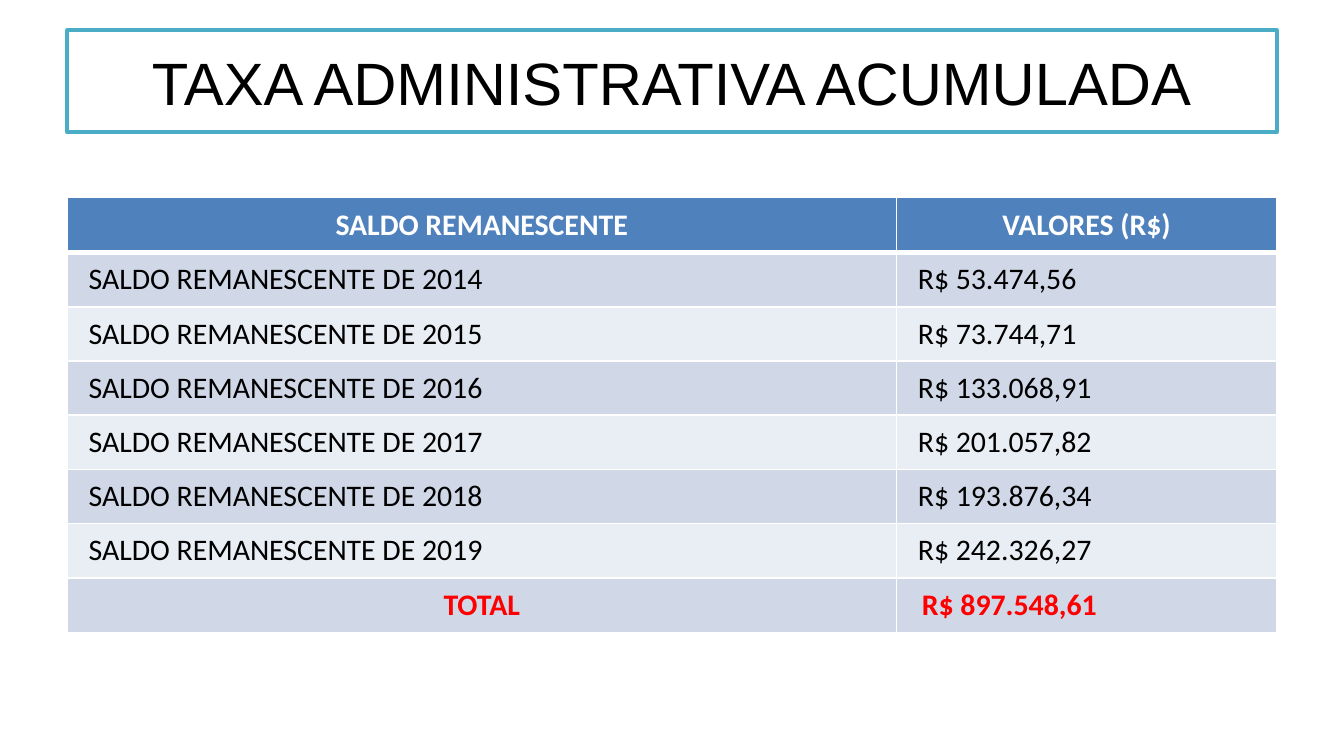
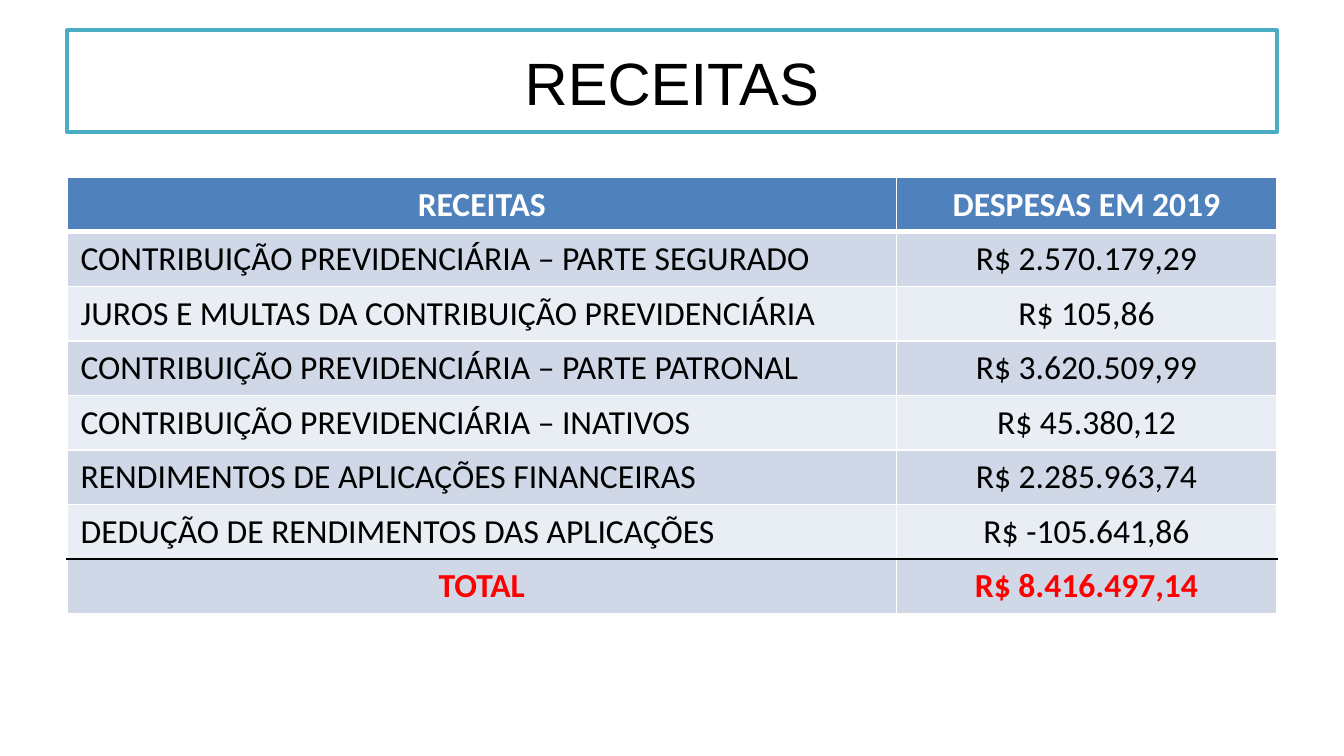
from dataclasses import dataclass

from lxml.etree import SubElement
from pptx import Presentation
from pptx.dml.color import RGBColor as Rgb
from pptx.enum.text import MSO_ANCHOR as Anchor, PP_ALIGN as Align
from pptx.oxml.ns import qn
from pptx.util import Inches, Pt


@dataclass(frozen=True)
class Theme:
    white: str = "FFFFFF"
    black: str = "000000"
    frame: str = "4BACC6"
    header: str = "4F81BD"
    bands: tuple = ("D0D8E8", "E9EDF4")
    total: str = "FF0000"
    title_font: str = "Arial"
    table_font: str = "Calibri"
    title_size: int = 32


theme = Theme()


def style_text(frame, font_name, size, color, align, bold=False):
    paragraph = frame.paragraphs[0]
    paragraph.alignment = align
    font = paragraph.runs[0].font
    font.name, font.size, font.bold = font_name, Pt(size), bold
    font.color.rgb = Rgb.from_string(color)


def add_border(cell, side, color, width):
    edge = SubElement(cell._tc.get_or_add_tcPr(), qn(f"a:ln{side}"), w=str(Pt(width)))
    SubElement(SubElement(edge, qn("a:solidFill")), qn("a:srgbClr"), val=color)


# Content: the last row of each table is its total
balances = [("SALDO REMANESCENTE", "VALORES (R$)")]
for year, amount in [
    (2014, "53.474,56"), (2015, "73.744,71"), (2016, "133.068,91"),
    (2017, "201.057,82"), (2018, "193.876,34"), (2019, "242.326,27"),
]:
    balances.append((f"SALDO REMANESCENTE DE {year}", f"R$ {amount}"))
balances.append(("TOTAL", "R$ 897.548,61"))

revenues = [
    ("RECEITAS", "DESPESAS EM 2019"),
    ("CONTRIBUIÇÃO PREVIDENCIÁRIA – PARTE SEGURADO", "R$ 2.570.179,29"),
    ("JUROS E MULTAS DA CONTRIBUIÇÃO PREVIDENCIÁRIA", "R$ 105,86"),
    ("CONTRIBUIÇÃO PREVIDENCIÁRIA – PARTE PATRONAL", "R$ 3.620.509,99"),
    ("CONTRIBUIÇÃO PREVIDENCIÁRIA – INATIVOS", "R$ 45.380,12"),
    ("RENDIMENTOS DE APLICAÇÕES FINANCEIRAS", "R$ 2.285.963,74"),
    ("DEDUÇÃO DE RENDIMENTOS DAS APLICAÇÕES", "R$ -105.641,86"),
    ("TOTAL", "R$ 8.416.497,14"),
]

pages = [
    dict(title="TAXA ADMINISTRATIVA ACUMULADA", rows=balances, top=1.47, size=16,
         anchor=Anchor.MIDDLE, amount_align=Align.LEFT, indent=0.16, total_indent=0.19,
         padding=0.01, edge_height=0.41, total_rule=theme.white),
    dict(title="RECEITAS", rows=revenues, top=1.32, size=18,
         anchor=Anchor.TOP, amount_align=Align.CENTER, indent=0.1, total_indent=0.1,
         padding=0.05, edge_height=3.24 / 8, total_rule=theme.black),
]

# Slide grid, 16:9
deck = Presentation()
deck.slide_width = Inches(10)
deck.slide_height = deck.slide_width * 9 // 16
margin = int(deck.slide_width * 0.05)
content_width = deck.slide_width - 2 * margin
label_width = Inches(6.17)
column_widths = (label_width, content_width - label_width)
table_height = 3.24

for page in pages:
    slide = deck.slides.add_slide(deck.slide_layouts[5])

    # Framed title
    title = slide.shapes.title
    title.left, title.top = margin, int(deck.slide_height * 0.04)
    title.width, title.height = content_width, Inches(0.76)
    title.fill.solid()
    title.fill.fore_color.rgb = Rgb.from_string(theme.white)
    title.line.color.rgb = Rgb.from_string(theme.frame)
    title.line.width = Pt(2)
    title.text_frame.text = page["title"]
    title.text_frame.vertical_anchor = Anchor.MIDDLE
    style_text(title.text_frame, theme.title_font, theme.title_size, theme.black, Align.CENTER)

    # Table grid: inner rows share what the header and total leave
    rows = page["rows"]
    last = len(rows) - 1
    edge_height = page["edge_height"]
    inner_height = (table_height - 2 * edge_height) / (last - 1)
    table = slide.shapes.add_table(len(rows), 2, margin, Inches(page["top"]),
                                   content_width, Inches(table_height)).table
    for column, width in zip(table.columns, column_widths):
        column.width = width

    # Table cells
    for r, row in enumerate(rows):
        is_header, is_total = r == 0, r == last
        table.rows[r].height = Inches(edge_height if is_header or is_total else inner_height)
        for c, wording in enumerate(row):
            cell = table.cell(r, c)
            cell.text_frame.text = wording
            cell.vertical_anchor = page["anchor"]

            if is_header:
                fill, color, align = theme.header, theme.white, Align.CENTER
            else:
                fill = theme.bands[(r - 1) % 2]
                color = theme.total if is_total else theme.black
                align = page["amount_align"] if c else Align.CENTER if is_total else Align.LEFT
            style_text(cell.text_frame, theme.table_font, page["size"], color, align,
                       is_header or is_total)

            if not (is_header or is_total):
                cell.margin_top = cell.margin_bottom = Inches(page["padding"])
            if align == Align.LEFT:
                cell.margin_left = Inches(page["total_indent" if is_total else "indent"])

            above = page["total_rule"] if is_total else theme.white
            below = page["total_rule"] if r == last - 1 else theme.white
            add_border(cell, "L", theme.white, 1)
            add_border(cell, "R", theme.white, 1)
            add_border(cell, "T", above, 3 if r == 1 else 1)
            add_border(cell, "B", below, 3 if is_header else 1)
            cell.fill.solid()
            cell.fill.fore_color.rgb = Rgb.from_string(fill)

deck.save("out.pptx")
